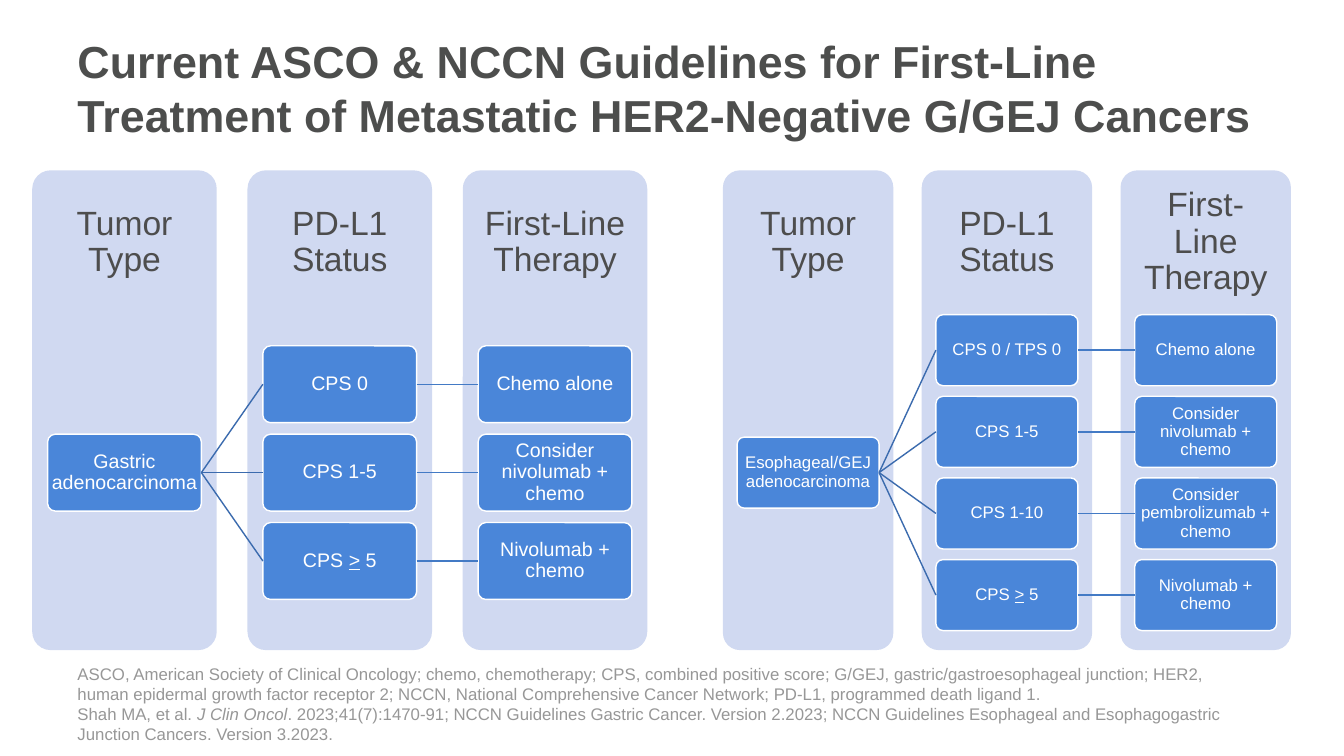
from pptx import Presentation
from pptx.dml.color import RGBColor
from pptx.enum.shapes import MSO_CONNECTOR, MSO_SHAPE
from pptx.enum.text import MSO_ANCHOR, PP_ALIGN
from pptx.oxml.ns import qn
from pptx.util import Inches, Pt
from lxml import etree

TITLE = RGBColor(0x4D, 0x4E, 0x4D)
HEADER = RGBColor(0x4D, 0x4D, 0x4D)
NOTE = RGBColor(0x97, 0x97, 0x97)
WHITE = RGBColor(0xFF, 0xFF, 0xFF)
LANE = RGBColor(0xD0, 0xD9, 0xF1)
NODE = RGBColor(0x4A, 0x86, 0xD9)
BRANCH = RGBColor(0x3B, 0x6B, 0xAE)
LINK = RGBColor(0x43, 0x7A, 0xC5)

LANE_TOP, LANE_H = 1.69, 4.76
HEADERS = ["Tumor Type", "PD-L1 Status", "First-Line Therapy"]

prs = Presentation()
prs.slide_width, prs.slide_height = Inches(13.33), Inches(7.5)
s = prs.slides.add_slide(prs.slide_layouts[6])


def write(sp, runs, size, color, anchor=MSO_ANCHOR.MIDDLE, centred=True, inset=None):
    """Fill a shape with one paragraph of (text, style) runs; "\n" breaks the line."""
    tf = sp.text_frame
    tf.word_wrap, tf.vertical_anchor = True, anchor
    if inset is not None:
        tf.margin_left = tf.margin_right = tf.margin_top = tf.margin_bottom = Inches(inset)
    p = tf.paragraphs[0]
    p.alignment = PP_ALIGN.CENTER if centred else PP_ALIGN.LEFT
    if centred:
        p.line_spacing = 0.9
    for text, style in runs:
        if text == "\n":
            p.add_line_break()
            continue
        r = p.add_run()
        r.text = text
        r.font.name, r.font.size, r.font.color.rgb = "Arial", Pt(size), color
        if style:
            setattr(r.font, style, True)


def rounded(x, y, w, h, fill):
    sp = s.shapes.add_shape(MSO_SHAPE.ROUNDED_RECTANGLE,
                            Inches(x), Inches(y), Inches(w), Inches(h))
    sp.adjustments[0] = 0.1
    sp.shadow.inherit = False
    sp.fill.solid()
    sp.fill.fore_color.rgb = fill
    return sp


# Title and footnote
tb = s.shapes.add_textbox(Inches(0.67), Inches(0.22), Inches(12.01), Inches(1.3))
write(tb, [("Current ASCO & NCCN Guidelines for First-Line Treatment of Metastatic "
            "HER2-Negative G/GEJ Cancers", "bold")], 32, TITLE, centred=False)

tb = s.shapes.add_textbox(Inches(0.67), Inches(6.55), Inches(11.75), Inches(0.88))
write(tb, [
    ("ASCO, American Society of Clinical Oncology; chemo, chemotherapy; CPS, combined "
     "positive score; G/GEJ, gastric/gastroesophageal junction; HER2, human epidermal "
     "growth factor receptor 2; NCCN, National Comprehensive Cancer Network; PD-L1, "
     "programmed death ligand 1.", None),
    ("\n", None),
    ("Shah MA, et al. ", None),
    ("J Clin Oncol", "italic"),
    (". 2023;41(7):1470-91; NCCN Guidelines Gastric Cancer. Version 2.2023; NCCN "
     "Guidelines Esophageal and Esophagogastric Junction Cancers. Version 3.2023.", None),
], 12, NOTE, MSO_ANCHOR.BOTTOM, centred=False)

# Decision trees: left edge, lane width, text size, tumor, (status, therapy) rows
HIGH_CPS = [("CPS ", None), (">", "underline"), (" 5", None)]
TREES = [
    (0.32, 1.83, 14, "Gastric adenocarcinoma", [
        ([("CPS 0", None)], "Chemo alone"),
        ([("CPS 1-5", None)], "Consider nivolumab + chemo"),
        (HIGH_CPS, "Nivolumab + chemo")]),
    (7.17, 1.69, 12, "Esophageal/GEJ adenocarcinoma", [
        ([("CPS 0 / TPS 0", None)], "Chemo alone"),
        ([("CPS 1-5", None)], "Consider nivolumab + chemo"),
        ([("CPS 1-10", None)], "Consider pembrolizumab + chemo"),
        (HIGH_CPS, "Nivolumab + chemo")]),
]

for left, lane_w, size, tumor, rows in TREES:
    # A lane is 12 units wide with a gap of 2; a node is 10 by 5 units
    u = lane_w / 12
    lane_x = [left + 14 * u * i for i in range(3)]

    # Lanes with their headers
    for x, header in zip(lane_x, HEADERS):
        rounded(x, LANE_TOP, lane_w, LANE_H, LANE).line.fill.background()
        tb = s.shapes.add_textbox(Inches(x), Inches(LANE_TOP),
                                  Inches(lane_w), Inches(0.3 * LANE_H))
        write(tb, [(header, None)], 24, HEADER, inset=0.19)

    # Nodes, as (column, row) with rows counted from the middle one
    cells = [(0, 0, [(tumor, None)])]
    for i, (status, therapy) in enumerate(rows):
        row = i - (len(rows) - 1) / 2
        cells += [(1, row, status), (2, row, [(therapy, None)])]
    nodes = []
    for col, row, runs in cells:
        y = LANE_TOP + 0.63 * LANE_H + (5.75 * row - 2.5) * u
        sp = rounded(lane_x[col] + u, y, 10 * u, 5 * u, NODE)
        sp.line.color.rgb, sp.line.width = WHITE, Pt(1)
        write(sp, runs, size, WHITE, inset=0.01)
        nodes.append(sp)

    # Branches from the tumor to each status, links from status to therapy
    root, statuses, therapies = nodes[0], nodes[1::2], nodes[2::2]
    joins = [(root, status, BRANCH) for status in statuses]
    joins += [(a, b, LINK) for a, b in zip(statuses, therapies)]
    for a, b, color in joins:
        cx = s.shapes.add_connector(MSO_CONNECTOR.STRAIGHT, 0, 0, 0, 0)
        cx.begin_connect(a, 3)
        cx.end_connect(b, 1)
        cx.line.color.rgb, cx.line.width = color, Pt(1)
        etree.SubElement(cx._element.spPr, qn("a:effectLst"))

prs.save("out.pptx")
